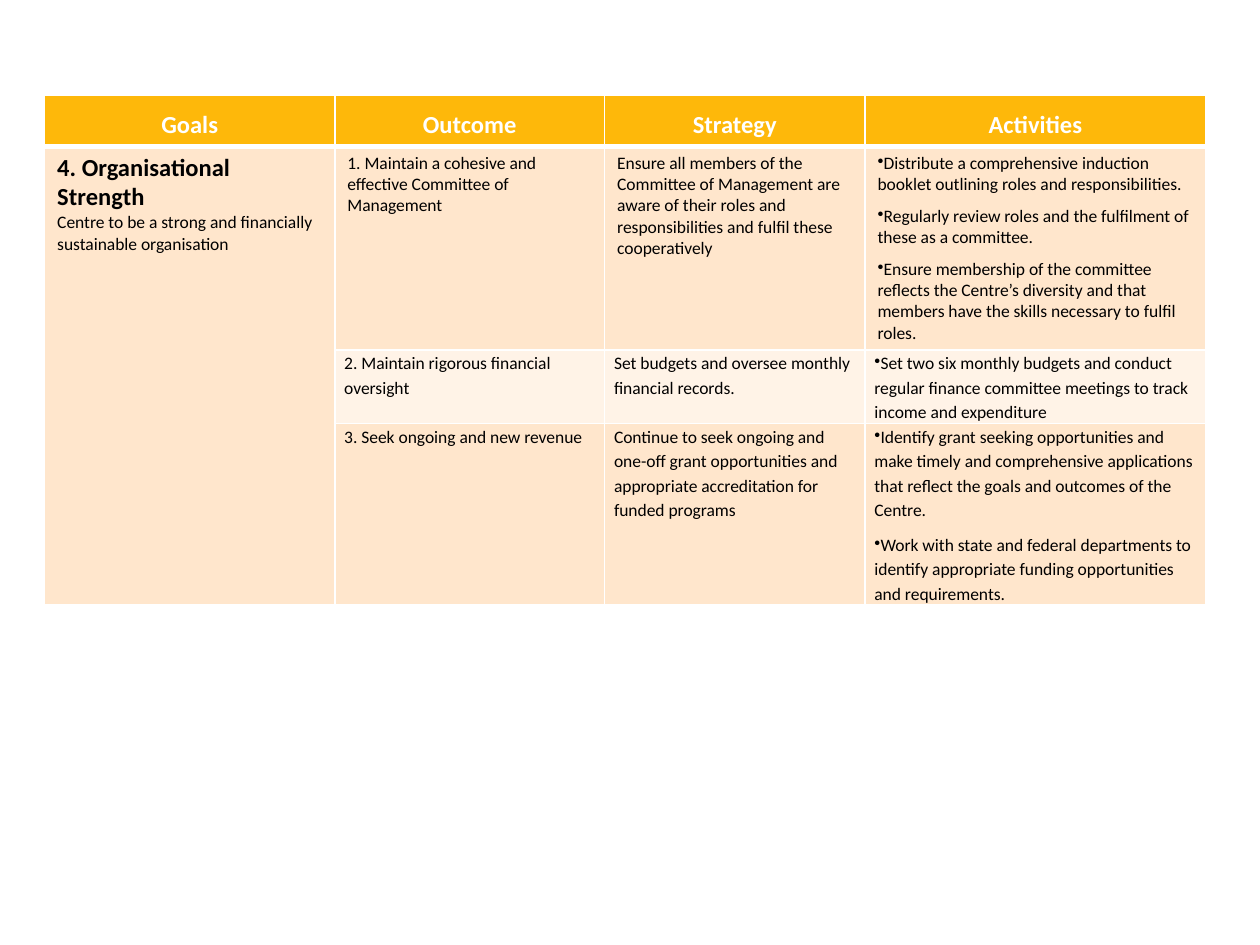
from lxml import etree
from pptx import Presentation
from pptx import util as u
from pptx.dml.color import RGBColor
from pptx.enum import text
from pptx.oxml.ns import qn

Pt = u.Pt
FONT = "Calibri"
WHITE, BLACK, GOLD, PEACH, CREAM = "FFFFFF", "000000", "FEB80A", "FFE6CC", "FFF3E7"
WIDTHS = [165.8, 154.2, 148.8, 194.8]
HEIGHTS = [29.2, 116, 42, 103]
FILLS = [GOLD, PEACH, CREAM, PEACH]

HEADER = dict(alignment=text.PP_ALIGN.CENTER, line_spacing=1.5, space_before=Pt(6))
LOOSE = dict(line_spacing=1.15)
BULLET = dict(space_after=Pt(6))
TIGHT_INSETS = dict(margin_left=Pt(5.4), margin_right=Pt(5.4), margin_top=0, margin_bottom=0)

HEADINGS = ["Goals", "Outcome", "Strategy", "Activities"]
GOAL = "4. Organisational Strength"
GOAL_DETAIL = "Centre to be a strong and financially sustainable organisation"
PLAN = [
    ("1. Maintain a cohesive and effective Committee of Management",
     "Ensure all members of the Committee of Management are aware of their roles and "
     "responsibilities and fulfil these cooperatively",
     ["Distribute a comprehensive induction booklet outlining roles and responsibilities.",
      "Regularly review roles and the fulfilment of these as a committee.",
      "Ensure membership of the committee reflects the Centre’s diversity and that members "
      "have the skills necessary to fulfil roles."]),
    ("2. Maintain rigorous financial oversight",
     "Set budgets and oversee monthly financial records.",
     ["Set two six monthly budgets and conduct regular finance committee meetings to track "
      "income and expenditure"]),
    ("3. Seek ongoing and new revenue",
     "Continue to seek ongoing and one-off grant opportunities and appropriate accreditation "
     "for funded programs",
     ["Identify grant seeking opportunities and make timely and comprehensive applications "
      "that reflect the goals and outcomes of the Centre.",
      "Work with state and federal departments to identify appropriate funding opportunities "
      "and requirements."]),
]


def color(value):
    return RGBColor.from_string(value)


def apply(target, values):
    for name, value in values.items():
        setattr(target, name, value)


def set_borders(cell, bottom):
    properties = cell._tc.get_or_add_tcPr()
    for index, side in enumerate("LRTB"):
        line = etree.Element(qn(f"a:ln{side}"), w=str(Pt(bottom if side == "B" else 1)))
        fill = etree.SubElement(line, qn("a:solidFill"))
        etree.SubElement(fill, qn("a:srgbClr"), val=WHITE)
        properties.insert(index, line)


def set_indent(para, left, first, bullet=None):
    properties = para._p.get_or_add_pPr()
    properties.set("marL", str(Pt(left)))
    properties.set("indent", str(Pt(first)))
    if bullet:
        etree.SubElement(properties, qn("a:buChar"), char=bullet)


def write(cell, lines, layout, size=10, bold=False, ink=BLACK):
    frame = cell.text_frame
    paras = []
    for index, line in enumerate(lines):
        para = frame.add_paragraph() if index else frame.paragraphs[0]
        apply(para, layout)
        span = para.add_run()
        span.text = line
        apply(span.font, dict(name=FONT, size=Pt(size), bold=bold))
        span.font.color.rgb = color(ink)
        paras.append(para)
    return paras


def style_grid(table):
    apply(table, dict(first_row=False, horz_banding=False))
    for column, width in zip(table.columns, WIDTHS):
        column.width = Pt(width)
    for index, (row, height, fill) in enumerate(zip(table.rows, HEIGHTS, FILLS)):
        row.height = Pt(height)
        for column, cell in enumerate(row.cells):
            cell.fill.solid()
            cell.fill.fore_color.rgb = color(PEACH if index and not column else fill)
            set_borders(cell, 1 if index else 3)
            if index != 1:
                apply(cell, TIGHT_INSETS)


def add_plan_table(page, left, top):
    table = page.shapes.add_table(
        len(HEIGHTS), len(WIDTHS), Pt(left), Pt(top), Pt(sum(WIDTHS)), Pt(sum(HEIGHTS))).table
    style_grid(table)
    for column, heading in enumerate(HEADINGS):
        write(table.cell(0, column), [heading], HEADER, 14, True, WHITE)

    goal = table.cell(1, 0)
    goal.merge(table.cell(len(PLAN), 0))
    title, detail = write(goal, [GOAL, GOAL_DETAIL], {}, 14, True)
    apply(detail.runs[0].font, dict(size=Pt(10), bold=False))

    for row, (outcome, strategy, activities) in enumerate(PLAN, 1):
        layout = LOOSE if row > 1 else {}
        outcome_paras = write(table.cell(row, 1), [outcome], layout)
        write(table.cell(row, 2), [strategy], layout)
        for para in write(table.cell(row, 3), activities, {**layout, **BULLET}):
            set_indent(para, 0, 0, "•")
    set_indent(outcome_paras[0], 27, -27)


def main():
    deck = Presentation()
    apply(deck, dict(slide_width=Pt(720), slide_height=Pt(540)))
    page = deck.slides.add_slide(deck.slide_layouts[6])
    add_plan_table(page, 25.5, 54.5)
    deck.save("out.pptx")


if __name__ == "__main__":
    main()
